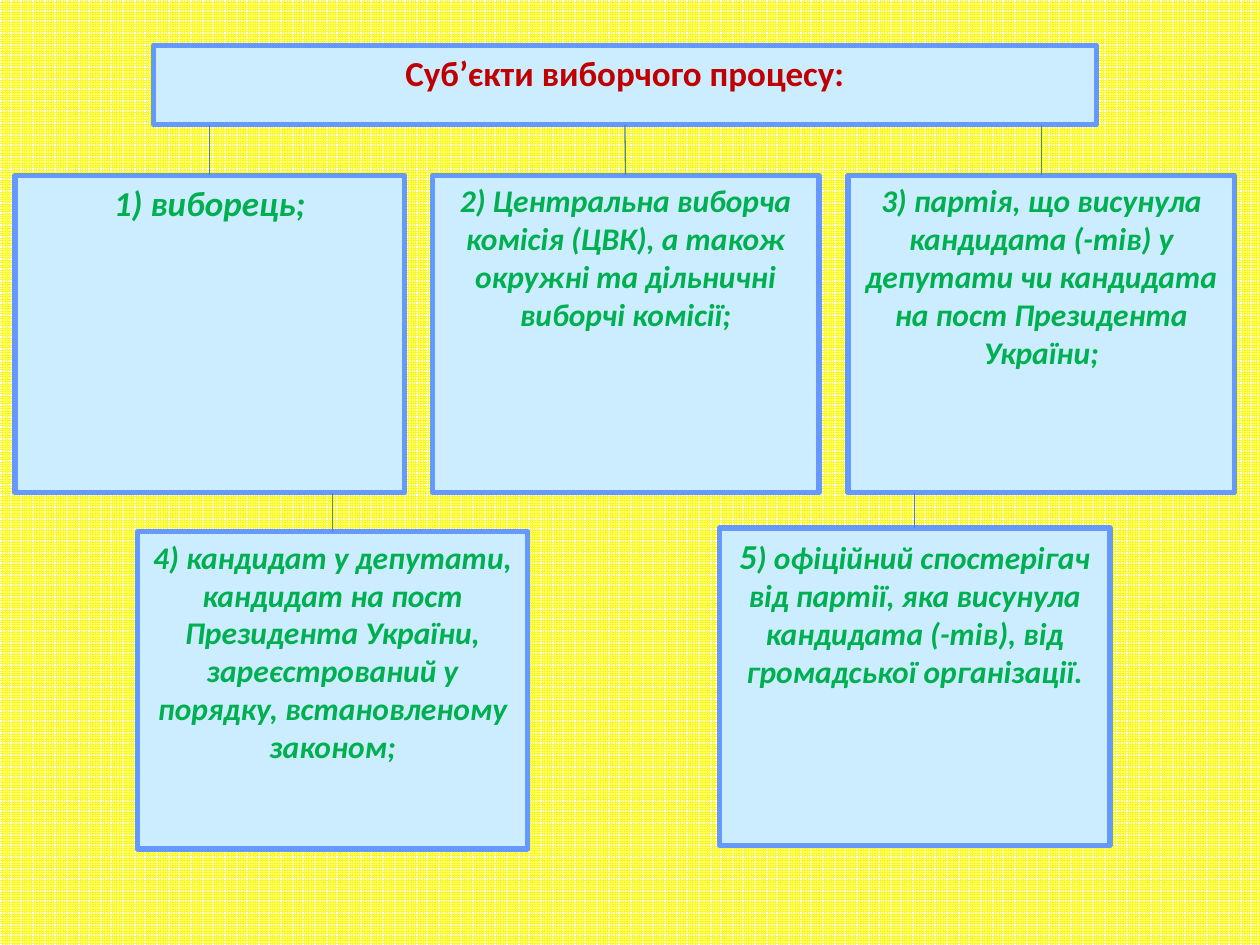
"""Build a slide with a chart of the subjects of the electoral process."""
from lxml.etree import SubElement
from pptx import Presentation
from pptx.dml.color import RGBColor
from pptx.enum.dml import MSO_PATTERN
from pptx.enum.shapes import MSO_CONNECTOR, MSO_SHAPE
from pptx.enum.text import MSO_ANCHOR, PP_ALIGN
from pptx.oxml.ns import qn
from pptx.util import Pt

YELLOW = RGBColor(0xFF, 0xFF, 0x00)
WHITE = RGBColor(0xFF, 0xFF, 0xFF)
PALE_BLUE = RGBColor(0xCC, 0xEC, 0xFF)
BORDER_BLUE = RGBColor(0x66, 0x99, 0xFF)
LINE_BLUE = RGBColor(0x4B, 0x7E, 0xBC)
RED = RGBColor(0xC0, 0x00, 0x00)
GREEN = RGBColor(0x00, 0xB0, 0x50)

TITLE = "Суб’єкти виборчого процесу:"
TITLE_BOX = (87.8, 25.9, 538.6, 45.4)
ROW_TOP, BOX_H = 100.1, 181.4
TITLE_BOTTOM = TITLE_BOX[1] + TITLE_BOX[3]
ROW_BOTTOM = ROW_TOP + BOX_H

# left, top, width, start of the connector above, runs of (text, size)
SUBJECTS = [
    (8.6, ROW_TOP, 222.5, TITLE_BOTTOM, [("1) виборець;", 20)]),
    (247, ROW_TOP, 221, TITLE_BOTTOM,
     [("2) Центральна виборча комісія (ЦВК), а також окружні та дільничні "
       "виборчі комісії;", 18)]),
    (484.6, ROW_TOP, 221, TITLE_BOTTOM,
     [("3) партія, що висунула кандидата (-тів) у депутати чи кандидата "
       "на пост Президента України;", 18)]),
    (78.5, 303.8, 223.2, ROW_BOTTOM,
     [("4) кандидат у депутати, кандидат на пост Президента України, "
       "зареєстрований у порядку, встановленому законом;", 18)]),
    (411.1, 301.7, 223.2, ROW_BOTTOM,
     [("5", 20),
      (") офіційний спостерігач від партії, яка висунула кандидата (-тів), "
       "від громадської організації.", 18)]),
]


def add_box(s, runs, *, box, color, italic=False):
    sp = s.shapes.add_shape(MSO_SHAPE.RECTANGLE, *map(Pt, box))
    sp.shadow.inherit = False
    sp.fill.solid()
    sp.fill.fore_color.rgb = PALE_BLUE
    sp.line.color.rgb = BORDER_BLUE
    sp.line.width = Pt(3)
    tf = sp.text_frame
    tf.word_wrap = True
    tf.vertical_anchor = MSO_ANCHOR.TOP
    p = tf.paragraphs[0]
    p.alignment = PP_ALIGN.CENTER
    p.space_before = Pt(runs[0][1] * 0.2)
    for text, size in runs:
        r = p.add_run()
        r.text = text
        r.font.name = "Calibri"
        r.font.size = Pt(size)
        r.font.bold = True
        r.font.italic = italic
        r.font.color.rgb = color
    return sp


def add_link(s, x, y, target):
    link = s.shapes.add_connector(
        MSO_CONNECTOR.STRAIGHT, Pt(x), Pt(y), Pt(x), target.top)
    link.end_connect(target, 0)
    link.line.color.rgb = LINE_BLUE
    link.line.width = Pt(0.75)
    SubElement(link.element.spPr, qn("a:effectLst"))
    return link


def main():
    prs = Presentation()
    prs.slide_width, prs.slide_height = Pt(720), Pt(540)
    s = prs.slides.add_slide(prs.slide_layouts[6])
    fill = s.background.fill
    fill.patterned()
    fill.pattern = MSO_PATTERN.SMALL_GRID
    fill.fore_color.rgb = YELLOW
    fill.back_color.rgb = WHITE

    title = add_box(s, [(TITLE, 20)], box=TITLE_BOX, color=RED)
    boxes = [add_box(s, runs, box=(x, y, w, BOX_H), color=GREEN, italic=True)
             for x, y, w, _, runs in SUBJECTS]
    links = [add_link(s, x + w / 2, start, box)
             for (x, _, w, start, _), box in zip(SUBJECTS, boxes)]
    links[1].begin_connect(title, 2)
    prs.save("out.pptx")


if __name__ == "__main__":
    main()
